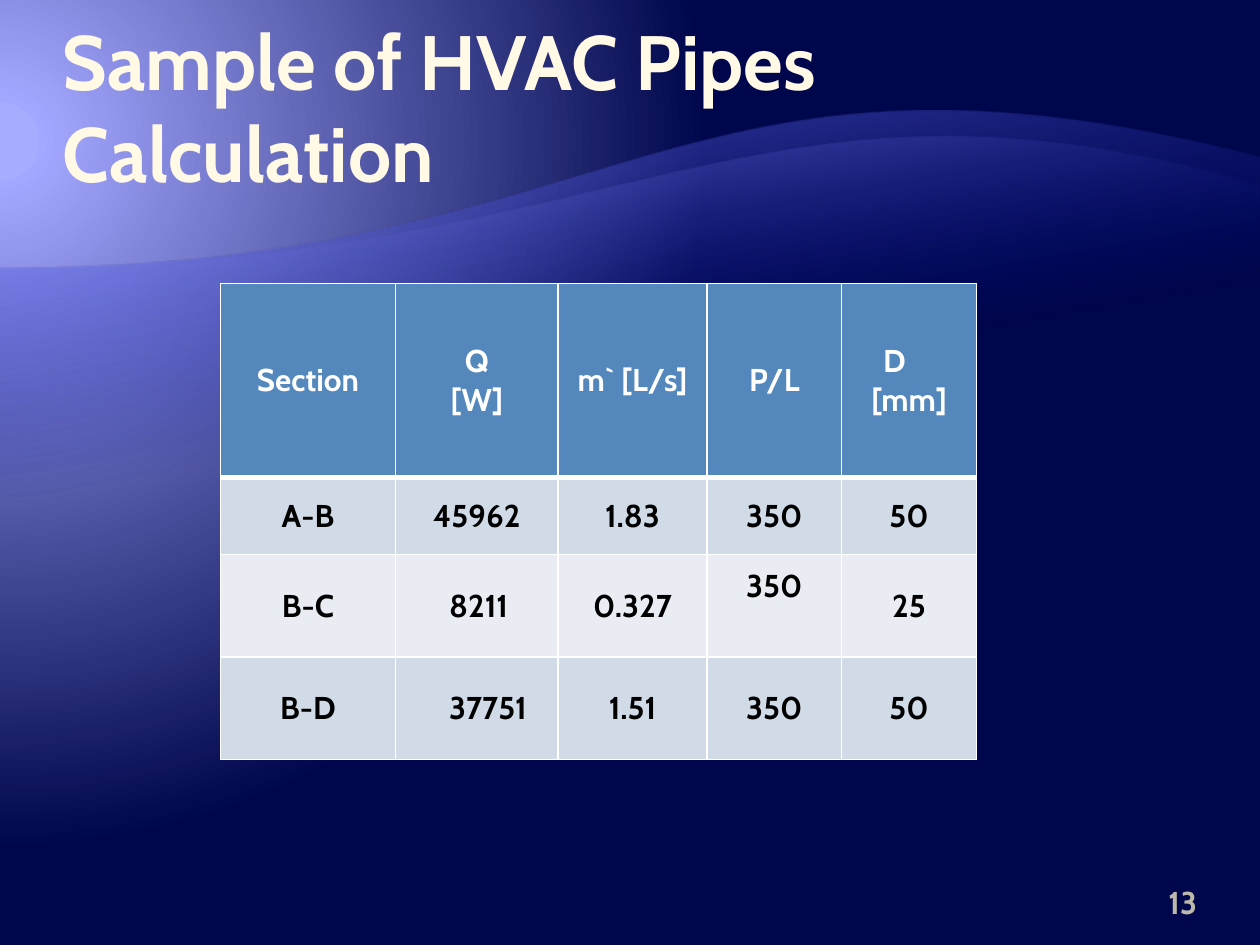
from lxml import etree
from pptx import Presentation
from pptx.dml.color import RGBColor
from pptx.enum.text import MSO_ANCHOR, PP_ALIGN
from pptx.oxml.ns import qn
from pptx.util import Pt

LEFT, CENTER, RIGHT = PP_ALIGN.LEFT, PP_ALIGN.CENTER, PP_ALIGN.RIGHT
MIDDLE, BOTTOM = MSO_ANCHOR.MIDDLE, MSO_ANCHOR.BOTTOM
SLIDE_WIDTH, SLIDE_HEIGHT = 720, 540

HEADINGS = ["Section", "Q\n[W]", "m` [L/s]", "P/L", "D\n[mm]"]
PIPES = [
    ["A-B", "45962", "1.83", "350", "50"],
    ["B-C", "8211", "0.327", "350", "25"],
    ["B-D", "37751", "1.51", "350", "50"],
]
COLUMN_WIDTHS = [100, 93, 85, 77, 77]
ROW_HEIGHTS = [111, 44, 58.5, 58.5]
BAND_FILLS = ["D1DAE7", "E9EDF3"]


def color(hex_code):
    return RGBColor.from_string(hex_code)


def add_xml(parent, tag, **attributes):
    values = {name: str(value) for name, value in attributes.items()}
    return etree.SubElement(parent, qn(tag), values)


class PipeSlide:
    font_name = "Cabin"
    border_color = "FFFFFF"

    def __init__(self, presentation):
        self.slide = presentation.slides.add_slide(presentation.slide_layouts[6])

    def set_paragraph(self, paragraph, text, size, ink, align):
        paragraph.text = text
        paragraph.alignment = align
        font = paragraph.font
        font.name, font.size, font.bold = self.font_name, Pt(size), True
        font.color.rgb = color(ink)

    def gradient(self, fill, owner, stops):
        fill.gradient()
        gradient = owner.find(".//" + qn("a:gradFill"))
        for part in list(gradient):
            gradient.remove(part)
        stop_list = add_xml(gradient, "a:gsLst")
        for position, ink, opacity in stops:
            stop = add_xml(stop_list, "a:gs", pos=position * 1000)
            tint = add_xml(stop, "a:srgbClr", val=ink)
            if opacity < 100:
                add_xml(tint, "a:alpha", val=opacity * 1000)
        return gradient

    def background(self, stops, focus):
        backdrop = self.slide.background
        gradient = self.gradient(backdrop.fill, self.slide.element, stops)
        circle = add_xml(gradient, "a:path", path="circle")
        sides = {side: value * 1000 for side, value in zip("ltrb", focus)}
        add_xml(circle, "a:fillToRect", **sides)

    def wave(self, crest_left, crest_right, base, controls, stops, angle):
        builder = self.slide.shapes.build_freeform(Pt(SLIDE_WIDTH), Pt(base))
        builder.add_line_segments(
            [(Pt(0), Pt(base)), (Pt(0), Pt(crest_left)), (Pt(SLIDE_WIDTH), Pt(crest_right))]
        )
        shape = builder.convert_to_shape()
        shape.shadow.inherit = False
        shape.line.fill.background()
        gradient = self.gradient(shape.fill, shape.element, stops)
        add_xml(gradient, "a:lin", ang=angle * 60000, scaled=0)

        crest = shape.element.findall(".//" + qn("a:lnTo"))[2]
        crest.tag = qn("a:cubicBezTo")
        for index, (x, y) in enumerate(controls):
            control = add_xml(crest, "a:pt", x=Pt(x), y=Pt(y) - shape.top)
            crest.insert(index, control)

    def text(self, box, text, size, ink, align, insets):
        frame = self.slide.shapes.add_textbox(*map(Pt, box)).text_frame
        frame.word_wrap = True
        frame.vertical_anchor = BOTTOM
        frame.margin_left, frame.margin_top, frame.margin_right, frame.margin_bottom = map(Pt, insets)
        self.set_paragraph(frame.paragraphs[0], text, size, ink, align)

    def cell(self, cell, text, fill, ink, bottom_width):
        properties = cell._tc.get_or_add_tcPr()
        for side, width in zip("LRTB", (1, 1, 1, bottom_width)):
            border = add_xml(properties, f"a:ln{side}", w=Pt(width))
            add_xml(add_xml(border, "a:solidFill"), "a:srgbClr", val=self.border_color)
        cell.fill.solid()
        cell.fill.fore_color.rgb = color(fill)
        cell.vertical_anchor = MIDDLE
        frame = cell.text_frame
        for index, line in enumerate(text.split("\n")):
            paragraph = frame.add_paragraph() if index else frame.paragraphs[0]
            self.set_paragraph(paragraph, line, 18, ink, CENTER)

    def indent(self, cell, distance):
        paragraph = cell.text_frame.paragraphs[0]
        paragraph.alignment = LEFT
        paragraph._p.get_or_add_pPr().set("marL", str(Pt(distance)))

    def table(self, left, top):
        rows = [HEADINGS] + PIPES
        frame = self.slide.shapes.add_table(
            len(rows), len(HEADINGS), Pt(left), Pt(top),
            Pt(sum(COLUMN_WIDTHS)), Pt(sum(ROW_HEIGHTS)),
        )
        table = frame.table
        for column, width in zip(table.columns, COLUMN_WIDTHS):
            column.width = Pt(width)
        for row, height in zip(table.rows, ROW_HEIGHTS):
            row.height = Pt(height)
        for row_index, values in enumerate(rows):
            if row_index == 0:
                style = "5488BC", "FFFFFF", 3
            else:
                style = BAND_FILLS[(row_index - 1) % 2], "000000", 1
            for column_index, value in enumerate(values):
                self.cell(table.cell(row_index, column_index), value, *style)
        return table


def main():
    presentation = Presentation()
    presentation.slide_width, presentation.slide_height = Pt(SLIDE_WIDTH), Pt(SLIDE_HEIGHT)
    page = PipeSlide(presentation)
    page.background(
        [(5, "A8ACFF", 100), (5, "A3A7FF", 100), (90, "00064B", 100)], (20, 30, 135, 100)
    )
    page.wave(153.5, 90, 528, [(360, 153.5), (384.5, 3.6)],
              [(65, "000D9E", 0), (100, "797FFF", 55)], 260)
    page.wave(153.5, 106, 458.5, [(360, 153.5), (430.5, 22.3)],
              [(65, "000D9E", 0), (100, "A3A7FF", 30)], 260)
    page.text((36, 54, 648, 60), "Sample of HVAC Pipes Calculation",
              44, "FFF9E5", LEFT, (0, 0.7, 0, 0.7))
    page.text((642, 500.5, 42, 29), "13", 18, "BDB8A9", RIGHT, (7.2, 3.6, 0, 3.6))

    pipe_table = page.table(126, 162)
    page.indent(pipe_table.cell(0, 4), 16.5)
    for row_index in (2, 3):
        page.indent(pipe_table.cell(row_index, 1), 23.5)
    pipe_table.cell(2, 3).margin_bottom = Pt(25.5)
    presentation.save("out.pptx")


if __name__ == "__main__":
    main()
